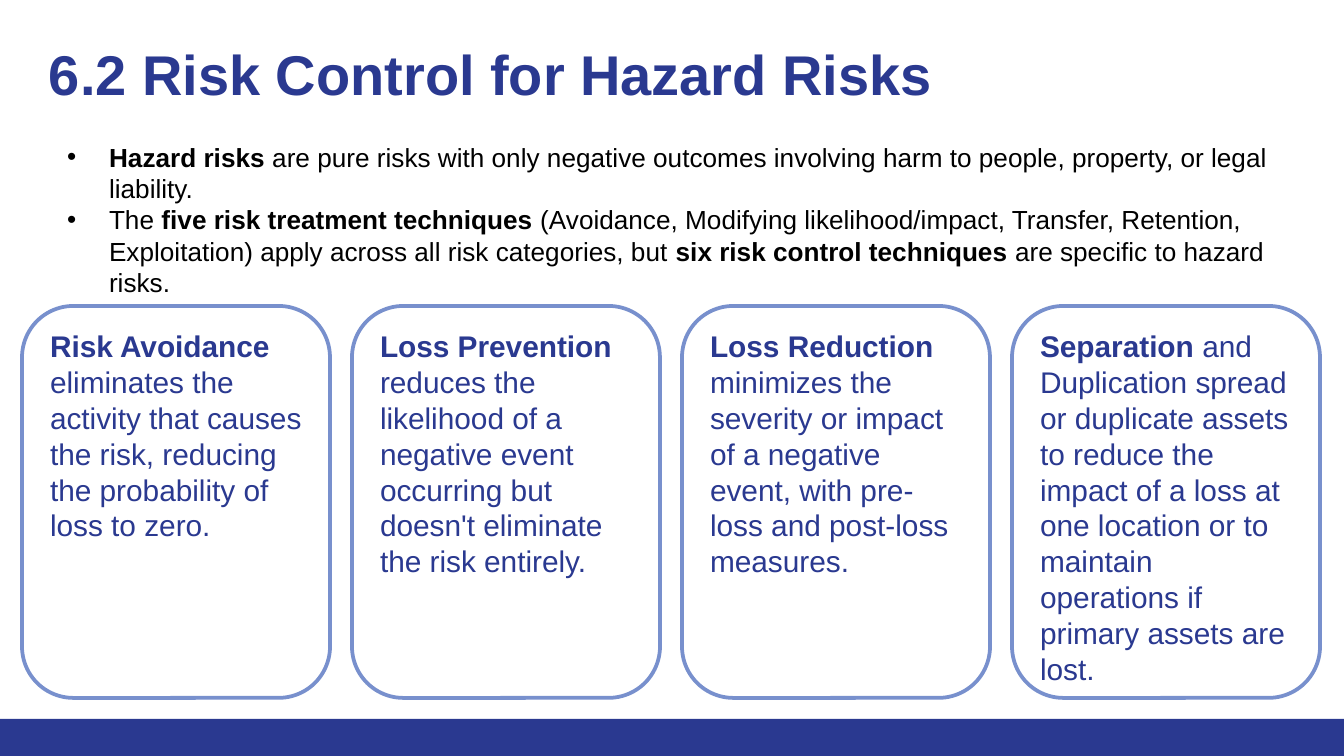
from lxml import etree
from pptx import Presentation
from pptx.dml.color import RGBColor
from pptx.enum.shapes import MSO_SHAPE
from pptx.enum.text import MSO_ANCHOR, MSO_AUTO_SIZE, PP_ALIGN
from pptx.oxml.ns import qn
from pptx.util import Pt

RECT = MSO_SHAPE.RECTANGLE
ROUND = MSO_SHAPE.ROUNDED_RECTANGLE
TOP = MSO_ANCHOR.TOP
LEFT = PP_ALIGN.LEFT
FIXED = MSO_AUTO_SIZE.NONE

FONT = "Arial"
HEX = {"navy": "2A3990", "edge": "7890CD", "black": "000000", "white": "FFFFFF"}
TITLE = "6.2 Risk Control for Hazard Risks"
POINTS = [
    [("Hazard risks ", True),
     ("are pure risks with only negative outcomes involving harm to people, "
      "property, or legal liability.", False)],
    [("The ", False),
     ("five risk treatment techniques ", True),
     ("(Avoidance, Modifying likelihood/impact, Transfer, Retention, "
      "Exploitation) apply across all risk categories, but ", False),
     ("six risk control techniques ", True),
     ("are specific to hazard risks.", False)],
]
CARDS = [
    ("Risk Avoidance", " eliminates the activity that causes the risk, "
     "reducing the probability of loss to zero."),
    ("Loss Prevention", " reduces the likelihood of a negative event "
     "occurring but doesn't eliminate the risk entirely."),
    ("Loss Reduction", " minimizes the severity or impact of a negative "
     "event, with pre-loss and post-loss measures."),
    ("Separation", " and Duplication spread or duplicate assets to reduce the "
     "impact of a loss at one location or to maintain operations if primary "
     "assets are lost."),
]

WIDE, HIGH = 1344, 756
SCALE = 9144000 / WIDE
BAR = 37
CARD_X, CARD_Y, CARD_W, CARD_H, STEP = 22, 306, 308, 392, 330
INDENT = 42


def px(num):
    return round(num * SCALE)


def tint(name):
    return RGBColor.from_string(HEX[name])


def place(shape, *box):
    shape.left, shape.top, shape.width, shape.height = map(px, box)


def setup(frame, pad_x, pad_y):
    frame.word_wrap = True
    frame.auto_size = FIXED
    frame.vertical_anchor = TOP
    frame.margin_left = frame.margin_right = px(pad_x)
    frame.margin_top = frame.margin_bottom = px(pad_y)


def style(para, size, color):
    para.alignment = LEFT
    para.space_before = Pt(0)
    para.font.name = FONT
    para.font.size = Pt(size)
    para.font.color.rgb = tint(color)


def write(para, runs, size, color):
    style(para, size, color)
    for text, bold in runs:
        run = para.add_run()
        run.text = text
        run.font.bold = bold


def bullet(para):
    props = para._p.get_or_add_pPr()
    props.set("marL", str(px(INDENT)))
    props.set("indent", str(-px(INDENT)))
    etree.SubElement(props, qn("a:buFont"), typeface=FONT)
    etree.SubElement(props, qn("a:buChar"), char="•")


def block(slide, kind, box, fill):
    shape = slide.shapes.add_shape(kind, *map(px, box))
    shape.shadow.inherit = False
    shape.fill.solid()
    shape.fill.fore_color.rgb = tint(fill)
    return shape


def main():
    deck = Presentation()
    deck.slide_width, deck.slide_height = px(WIDE), px(HIGH)
    slide = deck.slides.add_slide(deck.slide_layouts[1])

    title = slide.shapes.title
    place(title, 36, 27, 1236, 119)
    setup(title.text_frame, 13, 13)
    title.text_frame.text = TITLE
    head = title.text_frame.paragraphs[0]
    style(head, 30, "navy")
    head.font.bold = True

    body = slide.placeholders[1]
    place(body, 54, 134, 1236, 172)
    frame = body.text_frame
    setup(frame, 13, 7)
    for num, runs in enumerate(POINTS):
        para = frame.add_paragraph() if num else frame.paragraphs[0]
        bullet(para)
        write(para, runs, 14, "black")

    bar = block(slide, RECT, (0, HIGH - BAR, WIDE, BAR), "navy")
    bar.line.fill.background()

    for num, (name, text) in enumerate(CARDS):
        box = (CARD_X + num * STEP, CARD_Y, CARD_W, CARD_H)
        card = block(slide, ROUND, box, "white")
        card.line.color.rgb = tint("edge")
        card.line.width = Pt(2)
        setup(card.text_frame, 13, 7)
        runs = [(name, True), (text, False)]
        write(card.text_frame.paragraphs[0], runs, 16, "navy")

    deck.save("out.pptx")


if __name__ == "__main__":
    main()
